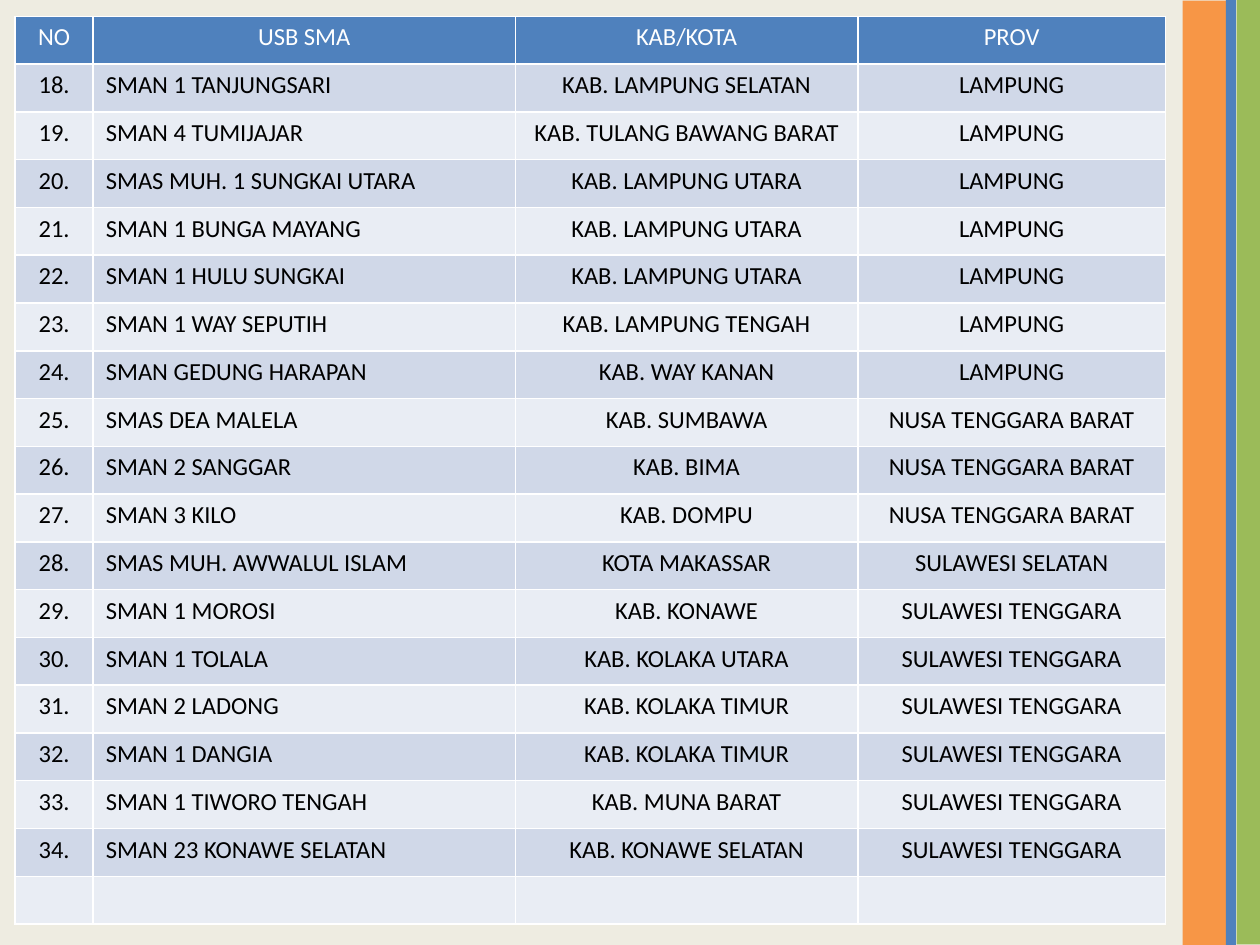
from lxml.etree import SubElement
from pptx import Presentation
from pptx.dml.color import RGBColor
from pptx.enum.shapes import MSO_SHAPE as Shape
from pptx.enum.text import PP_ALIGN as Align
from pptx.oxml.ns import qn
from pptx.util import Inches, Pt

CREAM = RGBColor(0xEE, 0xEC, 0xE1)
ORANGE = RGBColor(0xF7, 0x96, 0x46)
GREEN = RGBColor(0x9B, 0xBB, 0x59)
BLUE = RGBColor(0x4F, 0x81, 0xBD)
BAND_DARK = RGBColor(0xD0, 0xD8, 0xE8)
BAND_LIGHT = RGBColor(0xE9, 0xED, 0xF4)
WHITE = RGBColor(0xFF, 0xFF, 0xFF)
BLACK = RGBColor(0x00, 0x00, 0x00)

HEADER = ("NO", "USB SMA", "KAB/KOTA", "PROV")
FIRST_NUMBER = 18
SCHOOLS = [
    ("SMAN 1 TANJUNGSARI", "KAB. LAMPUNG SELATAN", "LAMPUNG"),
    ("SMAN 4 TUMIJAJAR", "KAB. TULANG BAWANG BARAT", "LAMPUNG"),
    ("SMAS MUH. 1 SUNGKAI UTARA", "KAB. LAMPUNG UTARA", "LAMPUNG"),
    ("SMAN 1 BUNGA MAYANG", "KAB. LAMPUNG UTARA", "LAMPUNG"),
    ("SMAN 1 HULU SUNGKAI", "KAB. LAMPUNG UTARA", "LAMPUNG"),
    ("SMAN 1 WAY SEPUTIH", "KAB. LAMPUNG TENGAH", "LAMPUNG"),
    ("SMAN GEDUNG HARAPAN", "KAB. WAY KANAN", "LAMPUNG"),
    ("SMAS DEA MALELA", "KAB. SUMBAWA", "NUSA TENGGARA BARAT"),
    ("SMAN 2 SANGGAR", "KAB. BIMA", "NUSA TENGGARA BARAT"),
    ("SMAN 3 KILO", "KAB. DOMPU", "NUSA TENGGARA BARAT"),
    ("SMAS MUH. AWWALUL ISLAM", "KOTA MAKASSAR", "SULAWESI SELATAN"),
    ("SMAN 1 MOROSI", "KAB. KONAWE", "SULAWESI TENGGARA"),
    ("SMAN 1 TOLALA", "KAB. KOLAKA UTARA", "SULAWESI TENGGARA"),
    ("SMAN 2 LADONG", "KAB. KOLAKA TIMUR", "SULAWESI TENGGARA"),
    ("SMAN 1 DANGIA", "KAB. KOLAKA TIMUR", "SULAWESI TENGGARA"),
    ("SMAN 1 TIWORO TENGAH", "KAB. MUNA BARAT", "SULAWESI TENGGARA"),
    ("SMAN 23 KONAWE SELATAN", "KAB. KONAWE SELATAN", "SULAWESI TENGGARA"),
]


class SlideBuilder:
    font_name = "Calibri"
    font_size = 14

    def __init__(self, slide):
        self.slide = slide

    def background(self, color):
        fill = self.slide.background.fill
        fill.solid()
        fill.fore_color.rgb = color

    def strip(self, left, top, width, height, color, rotation=0):
        shape = self.slide.shapes.add_shape(
            Shape.RECTANGLE, Inches(left), Inches(top), Inches(width), Inches(height))
        shape.rotation = rotation
        shape.shadow.inherit = False
        shape.fill.solid()
        shape.fill.fore_color.rgb = color
        shape.line.fill.background()

    def cell(self, cell, text, fill, color, align):
        cell.fill.solid()
        cell.fill.fore_color.rgb = fill
        paragraph = cell.text_frame.paragraphs[0]
        if not text:
            # An empty cell keeps its row height through the end mark's size
            SubElement(paragraph._p, qn("a:endParaRPr"), sz=str(self.font_size * 100))
            return
        paragraph.text = text
        paragraph.alignment = align
        font = paragraph.runs[0].font
        font.name = self.font_name
        font.size = Pt(self.font_size)
        font.bold = False
        font.color.rgb = color

    def table(self, left, top, height, column_widths, rows):
        table = self.slide.shapes.add_table(
            len(rows), len(column_widths), Inches(left), Inches(top),
            Inches(sum(column_widths)), Inches(height)).table
        for column, width in zip(table.columns, column_widths):
            column.width = Inches(width)
        for row_index, row in enumerate(rows):
            is_header = row_index == 0
            band = BAND_DARK if row_index % 2 else BAND_LIGHT
            for column_index, text in enumerate(row):
                is_name = column_index == 1 and not is_header
                self.cell(table.cell(row_index, column_index), text,
                          BLUE if is_header else band,
                          WHITE if is_header else BLACK,
                          Align.LEFT if is_name else Align.CENTER)


def main():
    presentation = Presentation()
    presentation.slide_width = Inches(10)
    presentation.slide_height = Inches(7.5)
    builder = SlideBuilder(presentation.slides.add_slide(presentation.slide_layouts[6]))

    # Background and the strips on the right edge
    builder.background(CREAM)
    builder.strip(5.81, 3.58, 7.5, 0.35, ORANGE, rotation=270)
    builder.strip(6.16, 3.65, 7.5, 0.19, GREEN, rotation=270)
    builder.strip(9.73, 0, 0.08, 7.5, BLUE)

    # School list, closed by an empty row
    numbered = [(f"{number}.", *school)
                for number, school in enumerate(SCHOOLS, FIRST_NUMBER)]
    rows = [HEADER, *numbered, ("",) * len(HEADER)]
    builder.table(0.12, 0.13, 7.21, (0.62, 3.35, 2.72, 2.44), rows)

    presentation.save("out.pptx")


if __name__ == "__main__":
    main()
